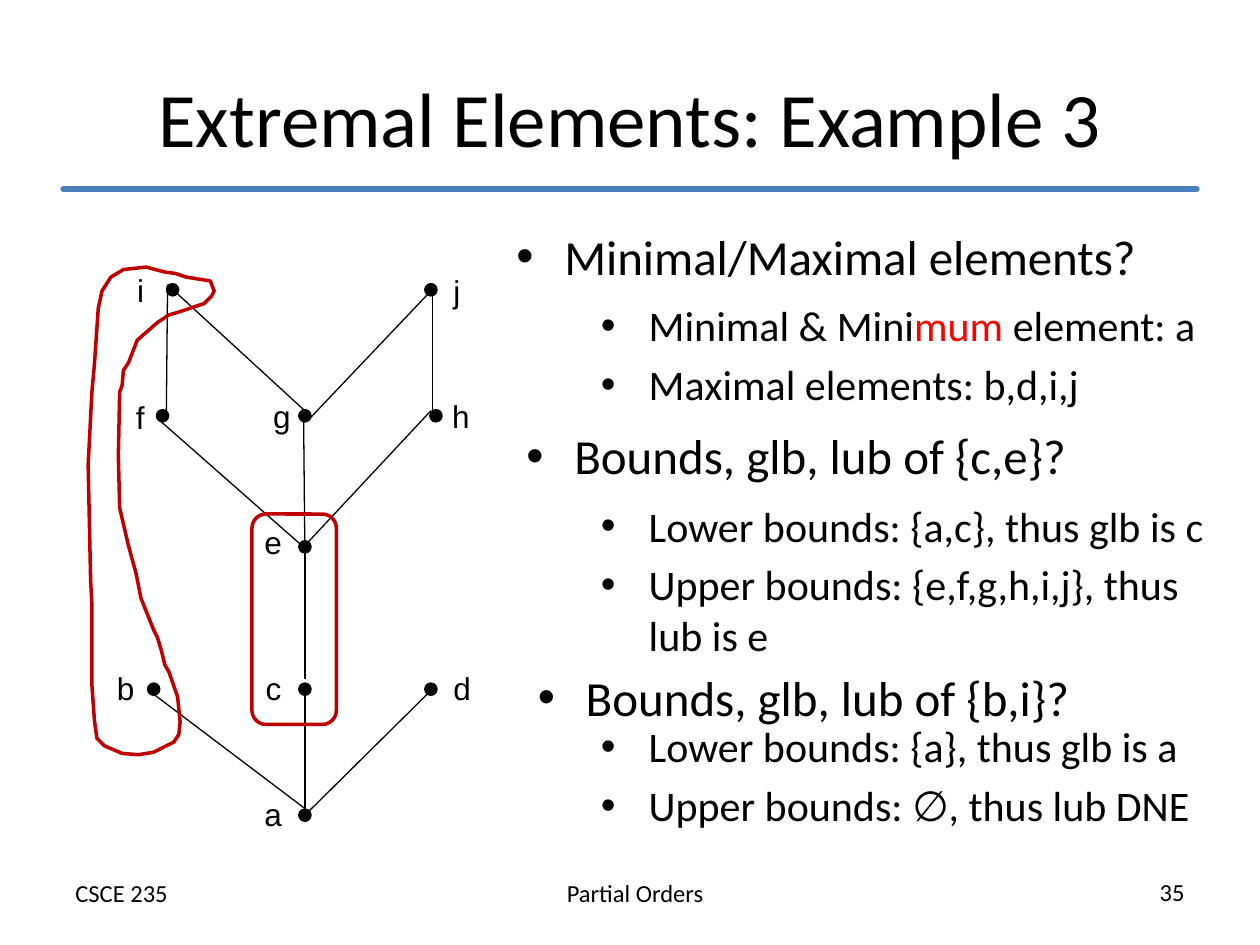
from lxml import etree
from pptx import Presentation
from pptx.dml.color import RGBColor
from pptx.enum.shapes import MSO_CONNECTOR, MSO_SHAPE
from pptx.enum.text import MSO_ANCHOR, MSO_AUTO_SIZE, PP_ALIGN
from pptx.oxml.ns import qn
from pptx.util import Pt

PX = 9144  # EMU in one px, 100 px to the inch
STRAIGHT = MSO_CONNECTOR.STRAIGHT
OVAL, ROUNDED = MSO_SHAPE.OVAL, MSO_SHAPE.ROUNDED_RECTANGLE
LEFT, CENTER, RIGHT = PP_ALIGN.LEFT, PP_ALIGN.CENTER, PP_ALIGN.RIGHT
TOP, MIDDLE = MSO_ANCHOR.TOP, MSO_ANCHOR.MIDDLE
GROW = MSO_AUTO_SIZE.SHAPE_TO_FIT_TEXT
COLORS = {"ink": "000000", "rule": "4B7EBC", "mark": "C00000", "accent": "FF0000"}
BODY_FONT, LABEL_FONT = "Calibri", "Arial"
DOT = 8

# Hasse diagram: element -> dot left/top, label left/top/width
NODES = {
    "a": ((238, 643), (200, 626, 34)),
    "b": ((118, 543), (83, 526, 33)),
    "c": ((238, 543), (201, 526, 33)),
    "d": ((338, 543), (350, 526, 34)),
    "e": ((238, 430), (200, 410, 34)),
    "f": ((125, 326), (98, 311, 27)),
    "g": ((238, 326), (207, 310, 34)),
    "h": ((342, 326), (349, 310, 34)),
    "i": ((133, 226), (99, 210, 26)),
    "j": ((338, 226), (350, 211, 26)),
}
EDGES = [
    ((245, 644), (122, 551)),  # a-b
    ((242, 643), (242, 543)),  # a-c
    ((245, 644), (340, 550)),  # a-d
    ((242, 539), (242, 435)),  # c-e
    ((243, 436), (126, 333)),  # e-f
    ((242, 439), (241, 335)),  # e-g
    ((242, 433), (342, 326)),  # e-h
    ((132, 333), (133, 226)),  # f-i
    ((243, 327), (133, 226)),  # g-i
    ((245, 333), (340, 233)),  # g-j
    ((343, 335), (343, 226)),  # h-j
]
# Hand-drawn loop around b and i
LOOP = [
    (167, 223), (148, 220), (139, 217), (131, 216), (116, 212), (98, 214),
    (88, 220), (81, 231), (78, 245), (75, 289), (73, 311), (70, 369), (72, 461),
    (73, 480), (73, 544), (75, 572), (77, 586), (83, 592), (97, 598), (110, 599),
    (122, 597), (138, 589), (142, 583), (143, 573), (141, 553), (134, 533),
    (131, 528), (128, 516), (125, 506), (122, 500), (120, 495), (112, 475),
    (108, 455), (102, 433), (98, 416), (95, 403), (94, 362), (95, 311), (97, 306),
    (98, 294), (102, 288), (109, 270), (125, 256), (134, 250), (141, 248),
    (153, 244), (162, 241), (168, 235), (170, 231),
]
# Questions: left, top, text
QUESTIONS = [
    (400, 175, "Minimal/Maximal elements?"),
    (408, 333, "Bounds, glb, lub of {c,e}?"),
    (417, 525, "Bounds, glb, lub of {b,i}?"),
]
# Answers: top, height, paragraphs of (text, color) runs
ANSWERS = [
    (233, 100, [[("Minimal & Mini", "ink"), ("mum", "accent"), (" element: a", "ink")],
                [("Maximal elements: b,d,i,j", "ink")]]),
    (392, 142, [[("Lower bounds: {a,c}, thus glb is c", "ink")],
                [("Upper bounds: {e,f,g,h,i,j}, thus lub is e", "ink")]]),
    (567, 108, [[("Lower bounds: {a}, thus glb is a", "ink")],
                [("Upper bounds: ∅, thus lub DNE", "ink")]]),
]
FOOTERS = [(50, 692, "CSCE 235", LEFT), (358, 692, "Partial Orders", CENTER),
           (658, 691, "35", RIGHT)]


class Board:
    """The current slide and the style of its elements."""

    def __init__(self, slide):
        self.slide = slide
        self.shapes = slide.shapes

    def color(self, name):
        return RGBColor.from_string(COLORS[name])

    def text(self, left, top, width, height, paragraphs, size, font=BODY_FONT,
             align=LEFT, anchor=TOP, wrap=True, grow=False, indent=None, level=0):
        box = self.shapes.add_textbox(left * PX, top * PX, width * PX, height * PX)
        frame = box.text_frame
        frame.word_wrap = wrap
        frame.vertical_anchor = anchor
        if grow:
            frame.auto_size = GROW
        for index, runs in enumerate(paragraphs):
            paragraph = frame.add_paragraph() if index else frame.paragraphs[0]
            paragraph.alignment = align
            paragraph.level = level
            if indent:
                paragraph.space_before = Pt(size * 0.2)
                self.bullet(paragraph, indent)
            for content, color in runs:
                run = paragraph.add_run()
                run.text = content
                run.font.size = Pt(size)
                run.font.name = font
                run.font.color.rgb = self.color(color)

    def bullet(self, paragraph, indent):
        properties = paragraph._p.get_or_add_pPr()
        properties.set("marL", str(indent * PX))
        properties.set("indent", str(-38 * PX))
        etree.SubElement(properties, qn("a:buFont")).set("typeface", "Arial")
        etree.SubElement(properties, qn("a:buChar")).set("char", "•")

    def line(self, start, end, color="ink", weight=0.75, cap="flat"):
        connector = self.shapes.add_connector(
            STRAIGHT, *(value * PX for value in start + end))
        connector.line.color.rgb = self.color(color)
        connector.line.width = Pt(weight)
        connector.line._get_or_add_ln().set("cap", cap)
        etree.SubElement(connector._element.spPr, qn("a:effectLst"))

    def outline(self, shape, color, filled=False):
        shape.shadow.inherit = False
        if filled:
            shape.fill.solid()
            shape.fill.fore_color.rgb = self.color(color)
        else:
            shape.fill.background()
        shape.line.color.rgb = self.color(color)
        shape.line.width = Pt(2)

    def shape(self, kind, left, top, width, height, color, filled=False):
        shape = self.shapes.add_shape(kind, left * PX, top * PX, width * PX, height * PX)
        self.outline(shape, color, filled)

    def loop(self, points, color):
        builder = self.shapes.build_freeform(*points[0], scale=PX)
        builder.add_line_segments(points[1:], close=True)
        self.outline(builder.convert_to_shape(), color)


def main():
    presentation = Presentation()
    presentation.slide_width, presentation.slide_height = 1000 * PX, 750 * PX
    board = Board(presentation.slides.add_slide(presentation.slide_layouts[6]))

    # Footer, rule and title
    for left, top, content, align in FOOTERS:
        board.text(left, top, 292, 34, [[(content, "ink")]], 14, align=align, grow=True)
    board.line((50, 150), (950, 150), "rule", 3, "rnd")
    board.text(50, 30, 900, 125, [[("Extremal Elements: Example 3", "ink")]], 44,
               align=CENTER, anchor=MIDDLE)

    # Hasse diagram
    for start, end in EDGES:
        board.line(start, end)
    for name, (dot, (left, top, width)) in NODES.items():
        board.shape(OVAL, *dot, DOT, DOT, "ink", filled=True)
        board.text(left, top, width, 40, [[(name, "ink")]], 18, LABEL_FONT,
                   wrap=False, grow=True)

    # Questions and answers
    for left, top, content in QUESTIONS:
        board.text(left, top, 575, 67, [[(content, "ink")]], 28, indent=38)
    for top, height, paragraphs in ANSWERS:
        board.text(417, top, 575, height, paragraphs, 24, indent=88, level=1)

    # Marks around {c,e} and {b,i}
    board.shape(ROUNDED, 200, 408, 67, 167, "mark")
    board.loop(LOOP, "mark")

    presentation.save("out.pptx")


if __name__ == "__main__":
    main()
